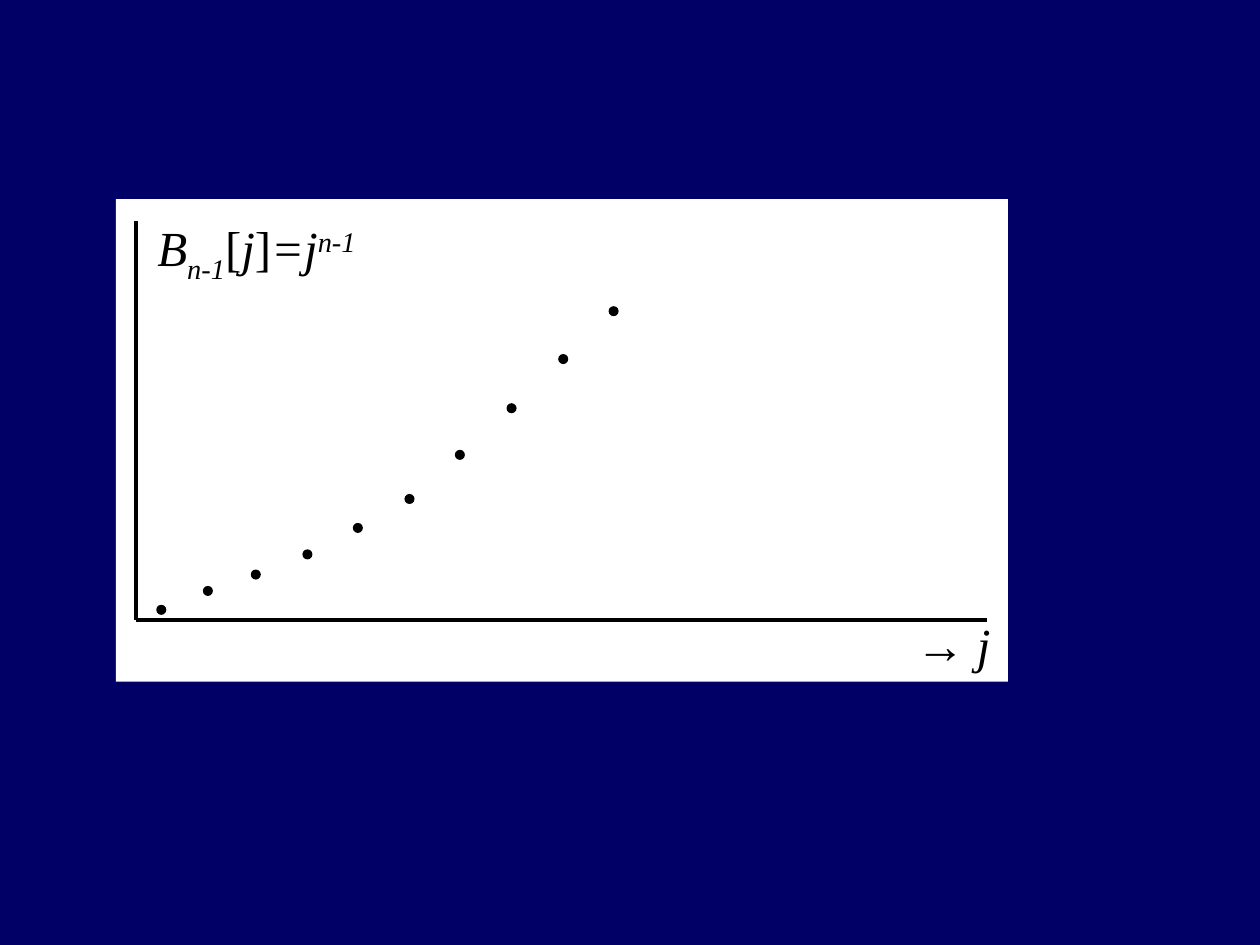
from pptx import Presentation
from pptx.dml.color import RGBColor
from pptx.enum import shapes, text
from pptx.oxml.ns import qn
from pptx.util import Inches, Pt
from lxml import etree

NAVY = RGBColor(0x00, 0x00, 0x66)
WHITE = RGBColor(0xFF, 0xFF, 0xFF)
BLACK = RGBColor(0x00, 0x00, 0x00)
FONT = "Times New Roman"
DOT_SIZE = 0.08
DOTS = [(1.24, 4.8), (1.61, 4.65), (1.99, 4.52), (2.4, 4.36), (2.8, 4.15),
        (3.21, 3.92), (3.61, 3.57), (4.02, 3.2), (4.43, 2.81), (4.83, 2.43)]
ORIGIN = (1.08, 4.92)
AXIS_ENDS = [(1.08, 1.75), (7.83, 4.92)]


def add_filled(parent, kind, box, color):
    sp = parent.shapes.add_shape(kind, *map(Inches, box))
    sp.shadow.inherit = False
    sp.fill.solid()
    sp.fill.fore_color.rgb = color
    sp.line.fill.background()


def add_axis(parent, start, end):
    line = parent.shapes.add_connector(
        shapes.MSO_CONNECTOR.STRAIGHT, *map(Inches, start + end))
    line.line.color.rgb = BLACK
    line.line.width = Pt(2)
    etree.SubElement(line._element.spPr, qn("a:effectLst"))


def add_formula(s, box, runs):
    tf = s.shapes.add_textbox(*map(Inches, box)).text_frame
    tf.word_wrap = False
    tf.auto_size = text.MSO_AUTO_SIZE.SHAPE_TO_FIT_TEXT
    p = tf.paragraphs[0]
    for content, italic, baseline in runs:
        r = p.add_run()
        r.text = content
        r.font.name = FONT
        r.font.size = Pt(28)
        r.font.italic = italic
        r.font.color.rgb = BLACK
        if baseline:
            r._r.get_or_add_rPr().set("baseline", str(baseline * 1000))


def main():
    prs = Presentation()
    prs.slide_width, prs.slide_height = Inches(10), Inches(7.5)
    s = prs.slides.add_slide(prs.slide_layouts[6])
    s.background.fill.solid()
    s.background.fill.fore_color.rgb = NAVY

    add_filled(s, shapes.MSO_SHAPE.RECTANGLE, (0.92, 1.58, 7.08, 3.83), WHITE)
    dots = s.shapes.add_group_shape()
    for x, y in DOTS:
        add_filled(dots, shapes.MSO_SHAPE.OVAL,
                   (x, y, DOT_SIZE, DOT_SIZE), BLACK)
    axes = s.shapes.add_group_shape()
    for end in AXIS_ENDS:
        add_axis(axes, ORIGIN, end)

    add_formula(s, (1.15, 1.68, 1.89, 0.57), [
        ("B", True, 0), ("n-1", True, -25), ("[", False, 0), ("j", True, 0),
        ("]", False, 0), ("=j", True, 0), ("n-1", True, 30)])
    add_formula(s, (7.17, 4.83, 0.79, 0.57), [
        ("→ ", False, 0), ("j", True, 0)])
    prs.save("out.pptx")


if __name__ == "__main__":
    main()
